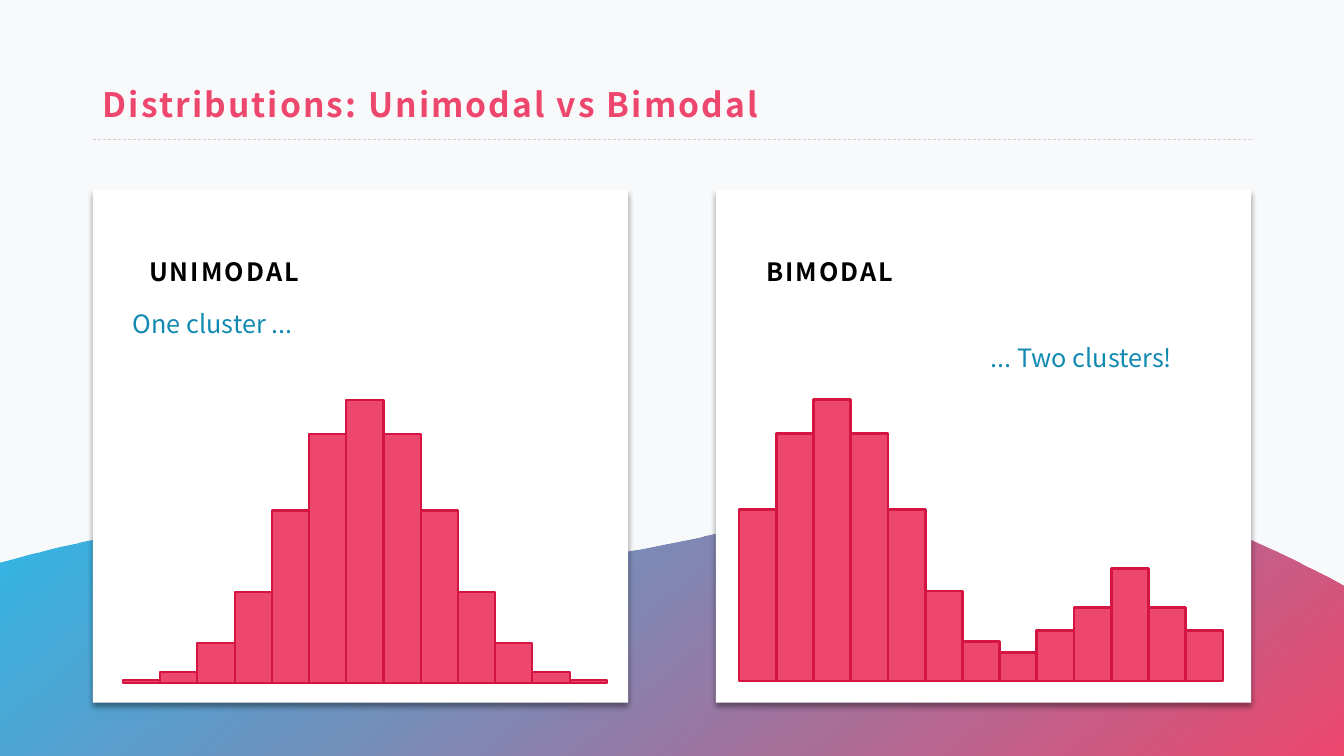
from lxml.etree import SubElement as Sub
from pptx import Presentation
from pptx.chart.data import CategoryChartData as Data
from pptx.dml.color import RGBColor as RGB
from pptx.enum.chart import XL_CHART_TYPE as Chart
from pptx.enum.dml import MSO_LINE as Dash
from pptx.enum.shapes import MSO_CONNECTOR as Link, MSO_SHAPE as Shape
from pptx.enum.text import MSO_ANCHOR as Anchor, PP_ALIGN as Align
from pptx.oxml.ns import qn
from pptx.util import Inches, Pt

FONT = "Noto Sans CJK JP"
HUES = {"back": "F8F9FB", "rose": "EE476E", "edge": "D41441", "sky": "16B3E8",
        "teal": "118AB1", "rule": "D0CECE", "white": "FFFFFF", "black": "000000"}
TITLE = "Distributions: Unimodal vs Bimodal"
PANELS = [
    {"left": 0.92, "head": ("UNIMODAL", 1.38), "note": ("One cluster ...", 1.22, 3.01),
     "plot": (1.12, 3.65), "line": 1.5,
     "vals": [1, 4, 14, 32, 61, 88, 100, 88, 61, 32, 14, 4, 1]},
    {"left": 7.1, "head": ("BIMODAL", 7.5), "note": ("... Two clusters!", 9.73, 3.35),
     "plot": (7.23, 3.63), "line": 2,
     "vals": [61, 88, 100, 88, 61, 32, 14, 10, 18, 26, 40, 26, 18]},
]
START = (0, 5.58)
CURVES = [
    [(0.15, 5.54), (0.69, 5.39), (1.39, 5.23), (2.02, 5.21)],
    [(2.02, 5.21), (3.03, 5.17), (4.09, 5.63), (5.48, 5.56)],
    [(5.48, 5.56), (6.87, 5.48), (8.96, 4.69), (10.35, 4.78)],
    [(10.35, 4.78), (11.4, 4.84), (12.54, 5.39), (13.26, 5.77)],
]
ENDS = [(13.33, 5.81), (13.33, 7.5), (0, 7.5)]
LAYOUT = {"x": 0.02, "y": 0.055, "w": 0.96, "h": 0.922}
STEPS = 20


def hue(name):
    return RGB.from_string(HUES[name])


def box(*sides):
    return [Inches(side) for side in sides]


def shade(props, name, alpha, blur, dist):
    effects = Sub(props, qn("a:effectLst"))
    drop = Sub(effects, qn("a:outerShdw"), blurRad=str(Pt(blur)),
               dist=str(Pt(dist)), dir="5400000", algn="t", rotWithShape="0")
    tone = Sub(drop, qn("a:srgbClr"), val=HUES[name])
    Sub(tone, qn("a:alpha"), val=str(alpha * 1000))


def bend(curve, t):
    weights = ((1 - t) ** 3, 3 * t * (1 - t) ** 2, 3 * t * t * (1 - t), t ** 3)
    return tuple(sum(w * spot[i] for w, spot in zip(weights, curve)) for i in (0, 1))


def write(shape, text, size, color, bold=False, space=0):
    frame = shape.text_frame
    frame.word_wrap = True
    frame.text = text
    para = frame.paragraphs[0]
    para.alignment = Align.LEFT
    font = para.font
    font.name, font.size, font.bold = FONT, Pt(size), bold
    font.color.rgb = hue(color)
    if space:
        frame.vertical_anchor = Anchor.MIDDLE
        para.runs[0].font.bold = bold
        para.runs[0].font._element.set("spc", str(int(space * 100)))
    return para


def wave(shapes):
    spots = [bend(curve, n / STEPS) for curve in CURVES for n in range(STEPS + 1)]
    path = shapes.build_freeform(*box(*START))
    path.add_line_segments([box(*spot) for spot in spots + ENDS])
    shape = path.convert_to_shape()
    shape.shadow.inherit = False
    shape.line.fill.background()
    shape.fill.gradient()
    shape.fill.gradient_angle = 310
    for stop, name in zip(shape.fill.gradient_stops, ("sky", "rose")):
        stop.color.rgb = hue(name)
    tone = shape._element.spPr.find(".//" + qn("a:srgbClr"))
    Sub(tone, qn("a:alpha"), val="90000")


def card(shapes, left):
    shape = shapes.add_shape(Shape.RECTANGLE, *box(left, 1.88, 5.31, 5.09))
    shape.fill.solid()
    shape.fill.fore_color.rgb = hue("white")
    shape.line.fill.background()
    shade(shape._element.spPr, "black", 40, 4, 3)


def bars(shapes, panel):
    vals = panel["vals"]
    data = Data()
    data.categories = [str(n + 1) for n in range(len(vals))]
    data.add_series("Series 1", vals)
    left, high = panel["plot"]
    chart = shapes.add_chart(Chart.COLUMN_CLUSTERED, *box(left, 3.21, 5, high), data).chart
    chart.has_legend = chart.has_title = False
    chart.font.name, chart.font.size = FONT, Pt(10)
    chart.font.color.rgb = hue("black")
    axis = chart.value_axis
    axis.minimum_scale, axis.maximum_scale = 0, 120
    axis.has_major_gridlines = False
    axis.visible = chart.category_axis.visible = False
    plot = chart.plots[0]
    plot.gap_width, plot.overlap = 0, -27
    plot.vary_by_categories = False
    series = plot.series[0]
    series.format.fill.solid()
    series.format.fill.fore_color.rgb = hue("rose")
    series.format.line.color.rgb = hue("edge")
    series.format.line.width = Pt(panel["line"])
    area = chart._chartSpace.chart.plotArea
    for old in area.findall(qn("c:layout")):
        area.remove(old)
    layout = Sub(area, qn("c:layout"))
    area.insert(0, layout)
    manual = Sub(layout, qn("c:manualLayout"))
    Sub(manual, qn("c:layoutTarget"), val="inner")
    for side in "xy":
        Sub(manual, qn(f"c:{side}Mode"), val="edge")
    for side, part in LAYOUT.items():
        Sub(manual, qn(f"c:{side}"), val=str(part))


def main():
    deck = Presentation()
    deck.slide_width, deck.slide_height = box(13.33, 7.5)
    slide = deck.slides.add_slide(deck.slide_layouts[5])
    slide.background.fill.solid()
    slide.background.fill.fore_color.rgb = hue("back")
    shapes = slide.shapes

    title = shapes.title
    title.left, title.top, title.width, title.height = box(0.92, 0.74, 11.5, 0.64)
    write(title, TITLE, 24, "rose", True, 1.5).line_spacing = 0.9

    wave(shapes)
    rule = shapes.add_connector(Link.STRAIGHT, *box(0.92, 1.38, 12.43, 1.38))
    rule.line.color.rgb = hue("rule")
    rule.line.width, rule.line.dash_style = Pt(0.5), Dash.DASH
    Sub(rule._element.spPr, qn("a:effectLst"))

    for panel in PANELS:
        card(shapes, panel["left"])
        text, left = panel["head"]
        head = shapes.add_textbox(*box(left, 2.23, 4.47, 0.77))
        para = write(head, text, 18, "black", True, 1.5)
        para.line_spacing, para.space_before = 1.5, Pt(15)
        bars(shapes, panel)
        text, left, top = panel["note"]
        note = shapes.add_textbox(*box(left, top, 2.62, 0.4))
        run = write(note, text, 18, "teal").runs[0]
        run.font.color.rgb = hue("teal")
        shade(run.font._element, "sky", 40, 4, 3)
    deck.save("out.pptx")


if __name__ == "__main__":
    main()
